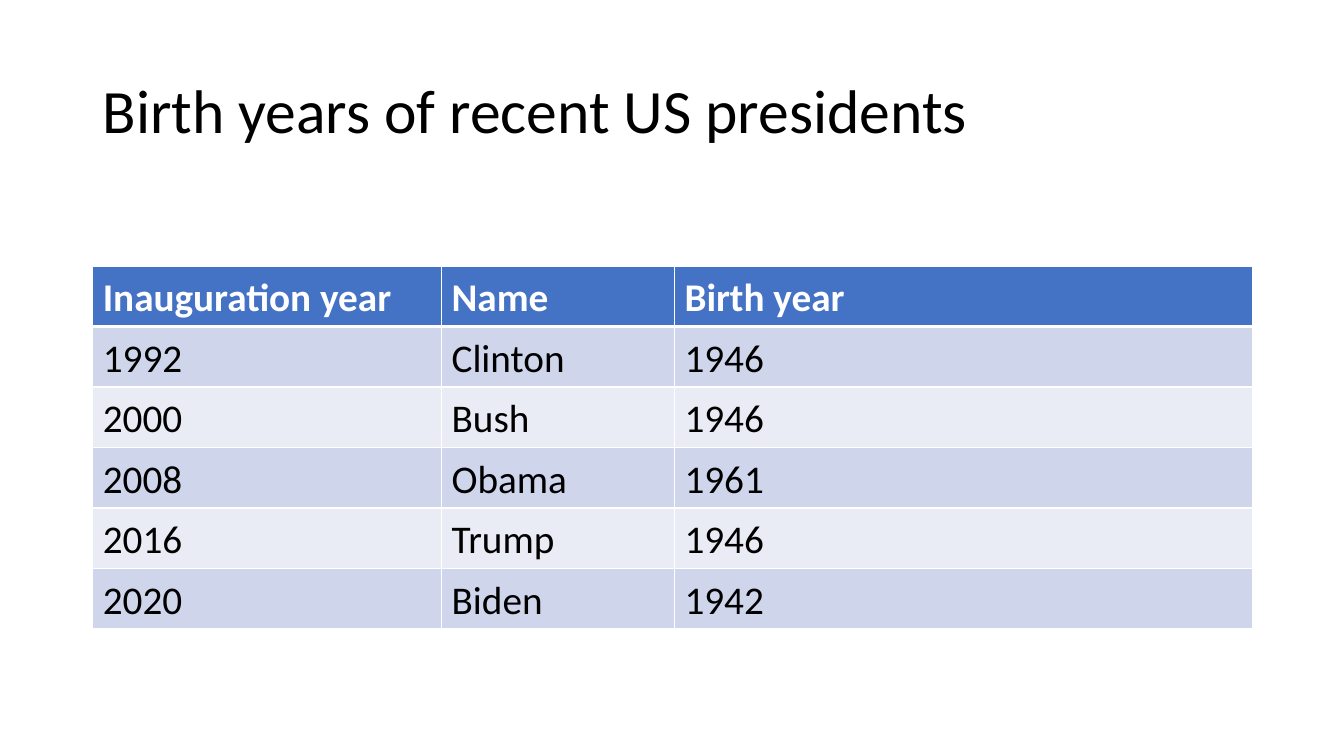
from lxml.etree import SubElement
from pptx import Presentation
from pptx.dml.color import RGBColor
from pptx.enum.text import MSO_ANCHOR
from pptx.oxml.ns import qn
from pptx.util import Inches, Pt

TITLE = "Birth years of recent US presidents"
ROWS = [
    ("Inauguration year", "Name", "Birth year"),
    ("1992", "Clinton", "1946"),
    ("2000", "Bush", "1946"),
    ("2008", "Obama", "1961"),
    ("2016", "Trump", "1946"),
    ("2020", "Biden", "1942"),
]
COL_WIDTHS = (3.46, 2.31, 5.73)
ROW_HEIGHT = 0.58
LEFT, TITLE_TOP, TITLE_HEIGHT, TABLE_TOP = 0.92, 0.4, 1.45, 2.64
WIDTH = sum(COL_WIDTHS)
FONT = "Calibri"
BLACK, WHITE, HEADER_FILL = "000000", "FFFFFF", "4472C4"
BAND_FILLS = ("E9EBF5", "CFD5EA")


def rgb(value):
    return RGBColor.from_string(value)


def add_run(p, text, size, color, bold=False):
    r = p.add_run()
    r.text = text
    r.font.name = FONT
    r.font.size = Pt(size)
    r.font.bold = bold
    r.font.color.rgb = rgb(color)


def set_borders(cell, top, bottom):
    """Draw white cell borders; top and bottom are widths in points."""
    tc_pr = cell._tc.get_or_add_tcPr()
    for side, width in (("L", 1), ("R", 1), ("T", top), ("B", bottom)):
        ln = SubElement(tc_pr, qn(f"a:ln{side}"), w=str(Pt(width)))
        fill = SubElement(ln, qn("a:solidFill"))
        SubElement(fill, qn("a:srgbClr"), val=WHITE)


def add_title(slide):
    sp = slide.shapes.add_textbox(Inches(LEFT), Inches(TITLE_TOP),
                                  Inches(WIDTH), Inches(TITLE_HEIGHT))
    tf = sp.text_frame
    tf.word_wrap = True
    tf.vertical_anchor = MSO_ANCHOR.MIDDLE
    p = tf.paragraphs[0]
    p.line_spacing = 0.9
    add_run(p, TITLE, 44, BLACK)


def add_presidents_table(slide):
    table = slide.shapes.add_table(
        len(ROWS), len(COL_WIDTHS), Inches(LEFT), Inches(TABLE_TOP),
        Inches(WIDTH), Inches(ROW_HEIGHT * len(ROWS))).table
    for column, width in zip(table.columns, COL_WIDTHS):
        column.width = Inches(width)
    for i, row in enumerate(ROWS):
        header = i == 0
        for j, text in enumerate(row):
            cell = table.cell(i, j)
            set_borders(cell, top=3 if i == 1 else 1, bottom=3 if header else 1)
            cell.fill.solid()
            cell.fill.fore_color.rgb = rgb(HEADER_FILL if header else BAND_FILLS[i % 2])
            p = cell.text_frame.paragraphs[0]
            p.line_spacing = 1.07
            p.space_after = Pt(8)
            add_run(p, text, 28, WHITE if header else BLACK, bold=header)


def main():
    prs = Presentation()
    prs.slide_width, prs.slide_height = Inches(13.33), Inches(7.5)
    slide = prs.slides.add_slide(prs.slide_layouts[6])
    add_title(slide)
    add_presidents_table(slide)
    prs.save("out.pptx")


if __name__ == "__main__":
    main()
